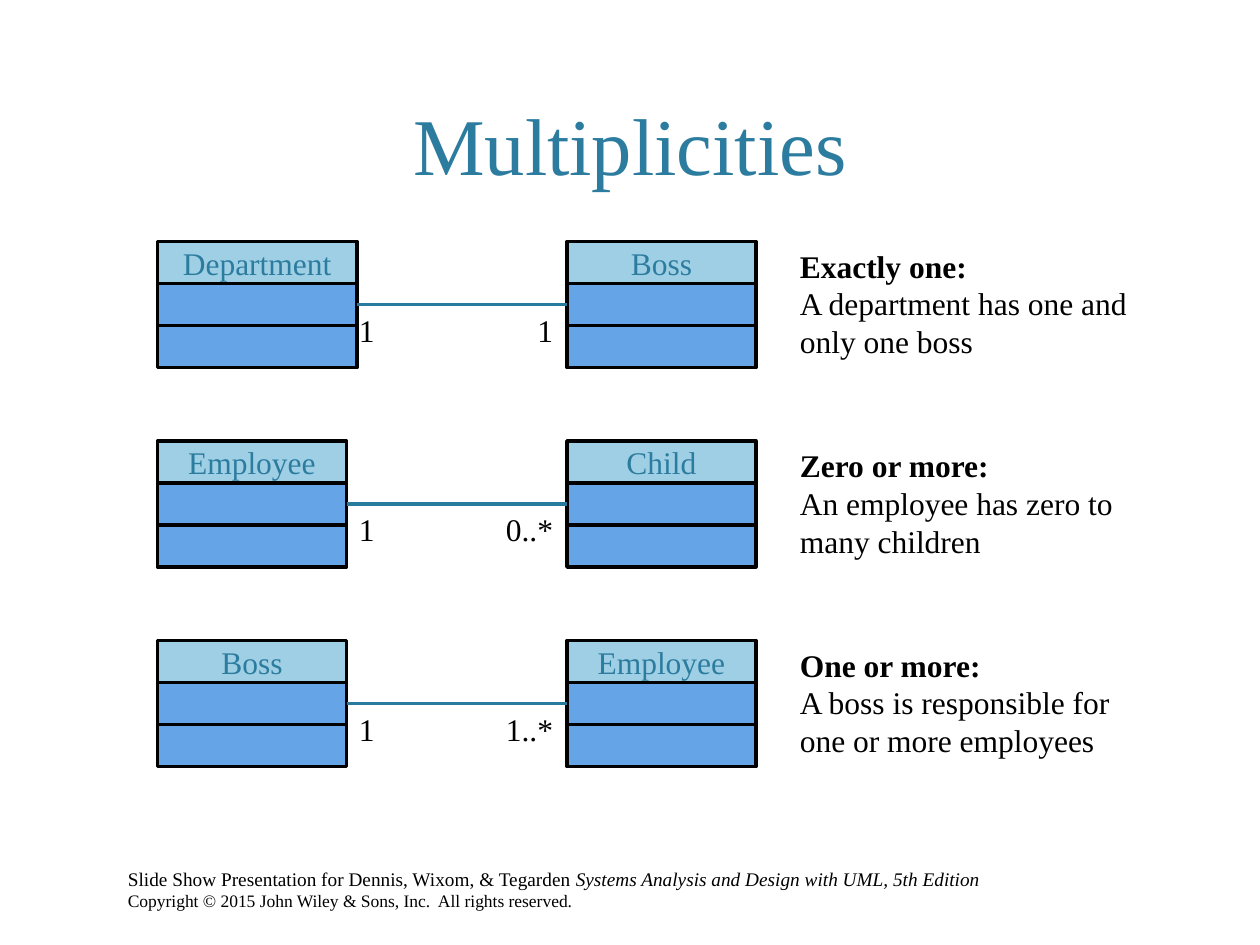
import pptx
import pptx.util
import pptx.dml.color
import pptx.enum.shapes
import pptx.enum.text
import pptx.oxml.ns
from lxml import etree

PX = 7620  # EMU per px, 120 px to the inch
FONT = "Times New Roman"
COLORS = {
    "title": "2C7C9F",
    "header": "9FCFE4",
    "body": "66A4E8",
    "link": "287A9E",
    "black": "000000",
}
ALIGN = pptx.enum.text.PP_ALIGN
ANCHOR = pptx.enum.text.MSO_ANCHOR
AUTO = pptx.enum.text.MSO_AUTO_SIZE

ROW_H = 40  # one compartment of a class box
LEFT_X, RIGHT_X, NOTE_X = 150, 540, 750
TOP, PITCH = 230, 190

# left class, its width, left label, right class, right label, label width, heading, note
RELATIONS = [
    ("Department", 190, "1", "Boss", "1", 40,
     "Exactly one:", "A department has one and only one boss"),
    ("Employee", 180, "1", "Child", "0..*", 70,
     "Zero or more:", "An employee has zero to many children"),
    ("Boss", 180, "1", "Employee", "1..*", 70,
     "One or more:", "A boss is responsible for one or more employees"),
]


def px(*values):
    return [pptx.util.Emu(v * PX) for v in values]


def rgb(name):
    return pptx.dml.color.RGBColor.from_string(COLORS[name])


def add_run(p, text, size, color="black", bold=False, italic=False):
    r = p.add_run()
    r.text = text
    r.font.name = FONT
    r.font.size = pptx.util.Pt(size)
    r.font.bold = bold
    r.font.italic = italic
    r.font.color.rgb = rgb(color)


def add_text_box(s, x, y, w, h, wrap=True):
    tf = s.shapes.add_textbox(*px(x, y, w, h)).text_frame
    tf.word_wrap = wrap
    tf.auto_size = AUTO.SHAPE_TO_FIT_TEXT
    return tf


def add_title(s, x, y, w, h):
    sp = s.shapes.title
    sp.left, sp.top, sp.width, sp.height = px(x, y, w, h)
    tf = sp.text_frame
    tf.auto_size = AUTO.NONE
    tf.vertical_anchor = ANCHOR.BOTTOM
    p = tf.paragraphs[0]
    p.alignment = ALIGN.CENTER
    add_run(p, "Multiplicities", 46, "title")


def add_class(s, x, y, w, name):
    group = s.shapes.add_group_shape()
    for i, fill in enumerate(("header", "body", "body")):
        sp = group.shapes.add_shape(
            pptx.enum.shapes.MSO_SHAPE.RECTANGLE, *px(x, y + i * ROW_H, w, ROW_H))
        sp.shadow.inherit = False
        sp.fill.solid()
        sp.fill.fore_color.rgb = rgb(fill)
        sp.line.color.rgb = rgb("black")
        sp.line.width = pptx.util.Pt(2)
        if i == 0:
            tf = sp.text_frame
            tf.vertical_anchor = ANCHOR.MIDDLE
            p = tf.paragraphs[0]
            p.alignment = ALIGN.CENTER
            add_run(p, name, 18, "title")


def add_link(s, x1, x2, y):
    line = s.shapes.add_connector(
        pptx.enum.shapes.MSO_CONNECTOR.STRAIGHT, *px(x1, y, x2, y))
    line.line.color.rgb = rgb("link")
    line.line.width = pptx.util.Pt(2)
    etree.SubElement(line._element.spPr, pptx.oxml.ns.qn("a:effectLst"))


def add_label(s, x, y, w, text):
    tf = add_text_box(s, x, y, w, 48, wrap=False)
    add_run(tf.paragraphs[0], text, 18)


def add_note(s, x, y, heading, text):
    tf = add_text_box(s, x, y, 350, 121)
    add_run(tf.paragraphs[0], heading, 18, bold=True)
    add_run(tf.add_paragraph(), text, 18)


def add_relation(s, y, left, left_w, left_label, right, right_label, label_w,
                 heading, note):
    middle = y + ROW_H * 3 // 2
    add_class(s, LEFT_X, y, left_w, left)
    add_class(s, RIGHT_X, y, 180, right)
    add_link(s, LEFT_X + left_w, RIGHT_X, middle)
    add_label(s, LEFT_X + 180, middle, 40, left_label)
    add_label(s, RIGHT_X - label_w, middle, label_w, right_label)
    add_note(s, NOTE_X, y - 1, heading, note)


def add_footer(s, x, y, w, h):
    tf = add_text_box(s, x, y, w, h)
    p = tf.paragraphs[0]
    add_run(p, "Slide Show Presentation for Dennis, Wixom, & Tegarden ", 11)
    add_run(p, "Systems Analysis and Design with UML, 5th Edition", 11, italic=True)
    add_run(tf.add_paragraph(),
            "Copyright © 2015 John Wiley & Sons, Inc.  All rights reserved.", 10)


def main():
    prs = pptx.Presentation()
    prs.slide_width, prs.slide_height = px(1200, 900)
    s = prs.slides.add_slide(prs.slide_layouts[5])  # title only
    add_footer(s, 110, 820, 913, 54)
    add_title(s, 72, 14, 1056, 175)
    for i, relation in enumerate(RELATIONS):
        add_relation(s, TOP + i * PITCH, *relation)
    prs.save("out.pptx")


if __name__ == "__main__":
    main()
